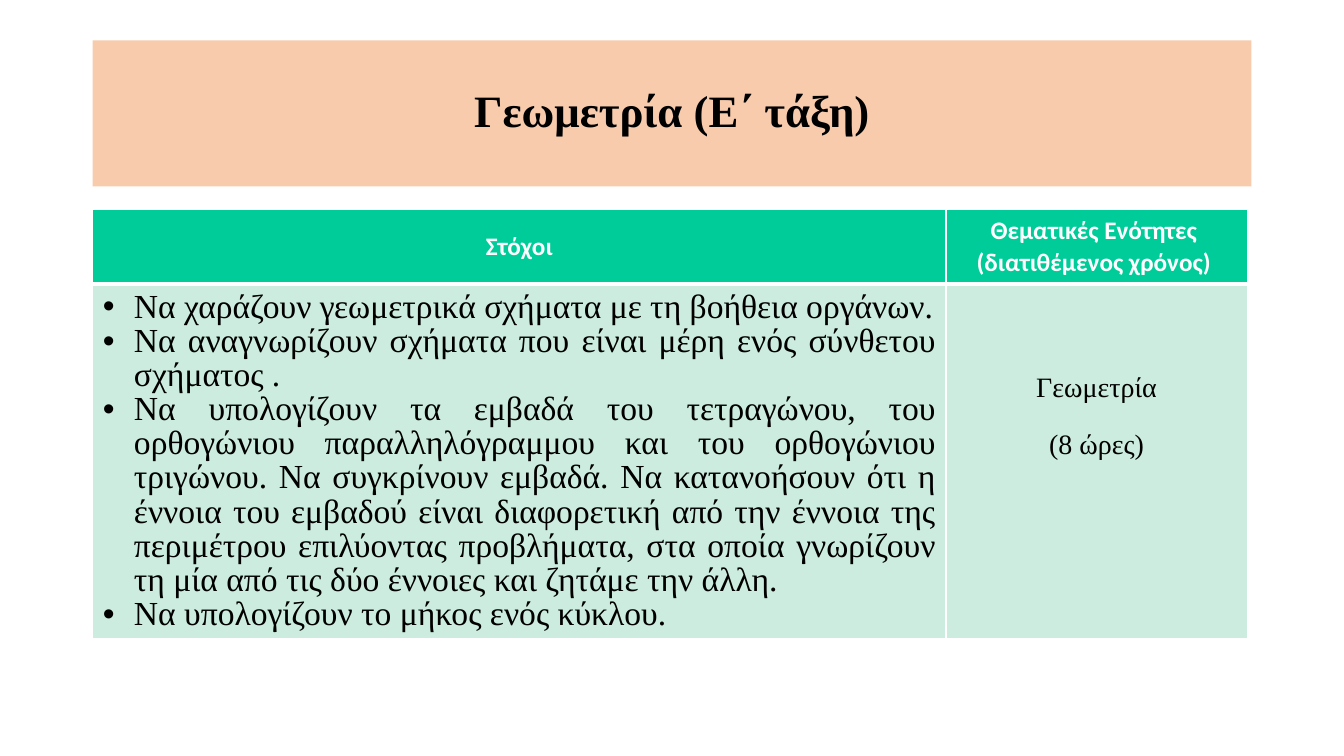
"""Build a slide with the goals and time of the fifth-grade geometry unit."""
from dataclasses import dataclass

from lxml import etree
from pptx import Presentation
from pptx import util as u
from pptx.dml.color import RGBColor
from pptx.enum import text
from pptx.oxml import ns


@dataclass(frozen=True)
class Theme:
    serif: str = "Times New Roman"
    sans: str = "Calibri"
    black: str = "000000"
    white: str = "FFFFFF"
    title_fill: str = "F8CBAD"
    header_fill: str = "00CC99"
    body_fill: str = "CBECDE"
    title_size: int = 32
    header_size: int = 18
    goal_size: int = 24
    unit_size: int = 20
    thin_line: float = 0.91
    thick_line: float = 2.95


@dataclass(frozen=True)
class TextStyle:
    font: str
    size: int
    color: str
    bold: bool = False
    align: text.PP_ALIGN = text.PP_ALIGN.CENTER
    line_spacing: float = 0.92
    paragraph_gap: float = 0
    bullet_indent: float = 0


@dataclass(frozen=True)
class CellSpec:
    row: int
    column: int
    lines: tuple[str, ...]
    style: TextStyle
    margin_top: float = 0.05


THEME = Theme()
LEFT = 0.92
TITLE = TextStyle(THEME.serif, THEME.title_size, THEME.black, bold=True, line_spacing=0.9)
HEADER = TextStyle(THEME.sans, THEME.header_size, THEME.white, bold=True, line_spacing=1.04)
GOALS = TextStyle(THEME.serif, THEME.goal_size, THEME.black,
                  align=text.PP_ALIGN.JUSTIFY, bullet_indent=0.31)
UNIT = TextStyle(THEME.serif, THEME.unit_size, THEME.black, paragraph_gap=20.4)
COLUMN_WIDTHS = (8.47, 2.99)
ROW_HEIGHTS = (0.73, 3.52)
CELLS = (
    CellSpec(0, 0, ("Στόχοι",), HEADER),
    CellSpec(0, 1, ("Θεματικές Ενότητες ", "(διατιθέμενος χρόνος) "), HEADER),
    CellSpec(1, 0, (
        "Να χαράζουν γεωμετρικά σχήματα με τη βοήθεια οργάνων.",
        "Να αναγνωρίζουν σχήματα που είναι μέρη ενός σύνθετου σχήματος .",
        "Να υπολογίζουν τα εμβαδά του τετραγώνου, του ορθογώνιου παραλληλόγραμμου "
        "και του ορθογώνιου τριγώνου. Να συγκρίνουν εμβαδά. Να κατανοήσουν ότι η "
        "έννοια του εμβαδού είναι διαφορετική από την έννοια της περιμέτρου "
        "επιλύοντας προβλήματα, στα οποία γνωρίζουν τη μία από τις δύο έννοιες "
        "και ζητάμε την άλλη.",
        "Να υπολογίζουν το μήκος ενός κύκλου.",
    ), GOALS, margin_top=0.07),
    CellSpec(1, 1, ("Γεωμετρία", "(8 ώρες)"), UNIT, margin_top=0.9),
)


def paint(fill, color: str) -> None:
    fill.solid()
    fill.fore_color.rgb = RGBColor.from_string(color)


def add_bullet(paragraph, indent: float) -> None:
    properties = paragraph._p.get_or_add_pPr()
    properties.set("marL", str(u.Inches(indent)))
    properties.set("indent", str(-u.Inches(indent)))
    etree.SubElement(properties, ns.qn("a:buFont"), typeface="Arial")
    etree.SubElement(properties, ns.qn("a:buChar"), char="•")


def write_lines(text_frame, lines: tuple[str, ...], style: TextStyle) -> None:
    text_frame.text = "\n".join(lines)
    text_frame.word_wrap = True
    for index, paragraph in enumerate(text_frame.paragraphs):
        paragraph.alignment = style.align
        paragraph.line_spacing = style.line_spacing
        paragraph.space_before = u.Pt(style.paragraph_gap if index else 0)
        if style.bullet_indent:
            add_bullet(paragraph, style.bullet_indent)
        for run in paragraph.runs:
            run.font.name = style.font
            run.font.size = u.Pt(style.size)
            run.font.bold = style.bold
            run.font.color.rgb = RGBColor.from_string(style.color)


def add_borders(cell, is_header: bool) -> None:
    properties = cell._tc.get_or_add_tcPr()
    thick_side = "lnB" if is_header else "lnT"
    for side in ("lnL", "lnR", "lnT", "lnB"):
        width = THEME.thick_line if side == thick_side else THEME.thin_line
        line = etree.SubElement(properties, ns.qn(f"a:{side}"), w=str(u.Pt(width)))
        fill = etree.SubElement(line, ns.qn("a:solidFill"))
        etree.SubElement(fill, ns.qn("a:srgbClr"), val=THEME.white)


def add_title(slide) -> None:
    title = slide.shapes.title
    title.left, title.top = u.Inches(LEFT), u.Inches(0.4)
    title.width, title.height = u.Inches(11.5), u.Inches(1.45)
    paint(title.fill, THEME.title_fill)
    title.text_frame.vertical_anchor = text.MSO_ANCHOR.MIDDLE
    write_lines(title.text_frame, ("Γεωμετρία (Ε΄ τάξη)",), TITLE)


def fill_cell(cell, spec: CellSpec) -> None:
    is_header = spec.row == 0
    add_borders(cell, is_header)
    paint(cell.fill, THEME.header_fill if is_header else THEME.body_fill)
    cell.margin_left = cell.margin_right = u.Inches(0.1)
    cell.margin_top, cell.margin_bottom = u.Inches(spec.margin_top), u.Inches(0.05)
    cell.vertical_anchor = text.MSO_ANCHOR.MIDDLE if is_header else text.MSO_ANCHOR.TOP
    write_lines(cell.text_frame, spec.lines, spec.style)


def add_goals_table(slide) -> None:
    table = slide.shapes.add_table(
        len(ROW_HEIGHTS), len(COLUMN_WIDTHS), u.Inches(LEFT), u.Inches(2.08),
        u.Inches(sum(COLUMN_WIDTHS)), u.Inches(sum(ROW_HEIGHTS))).table
    table.horz_banding = False
    for column, width in zip(table.columns, COLUMN_WIDTHS):
        column.width = u.Inches(width)
    for row, height in zip(table.rows, ROW_HEIGHTS):
        row.height = u.Inches(height)
    for spec in CELLS:
        fill_cell(table.cell(spec.row, spec.column), spec)


def main() -> None:
    presentation = Presentation()
    presentation.slide_width = u.Inches(13.34)
    presentation.slide_height = u.Inches(7.5)
    slide = presentation.slides.add_slide(presentation.slide_layouts.get_by_name("Title Only"))
    add_title(slide)
    add_goals_table(slide)
    presentation.save("out.pptx")


if __name__ == "__main__":
    main()
